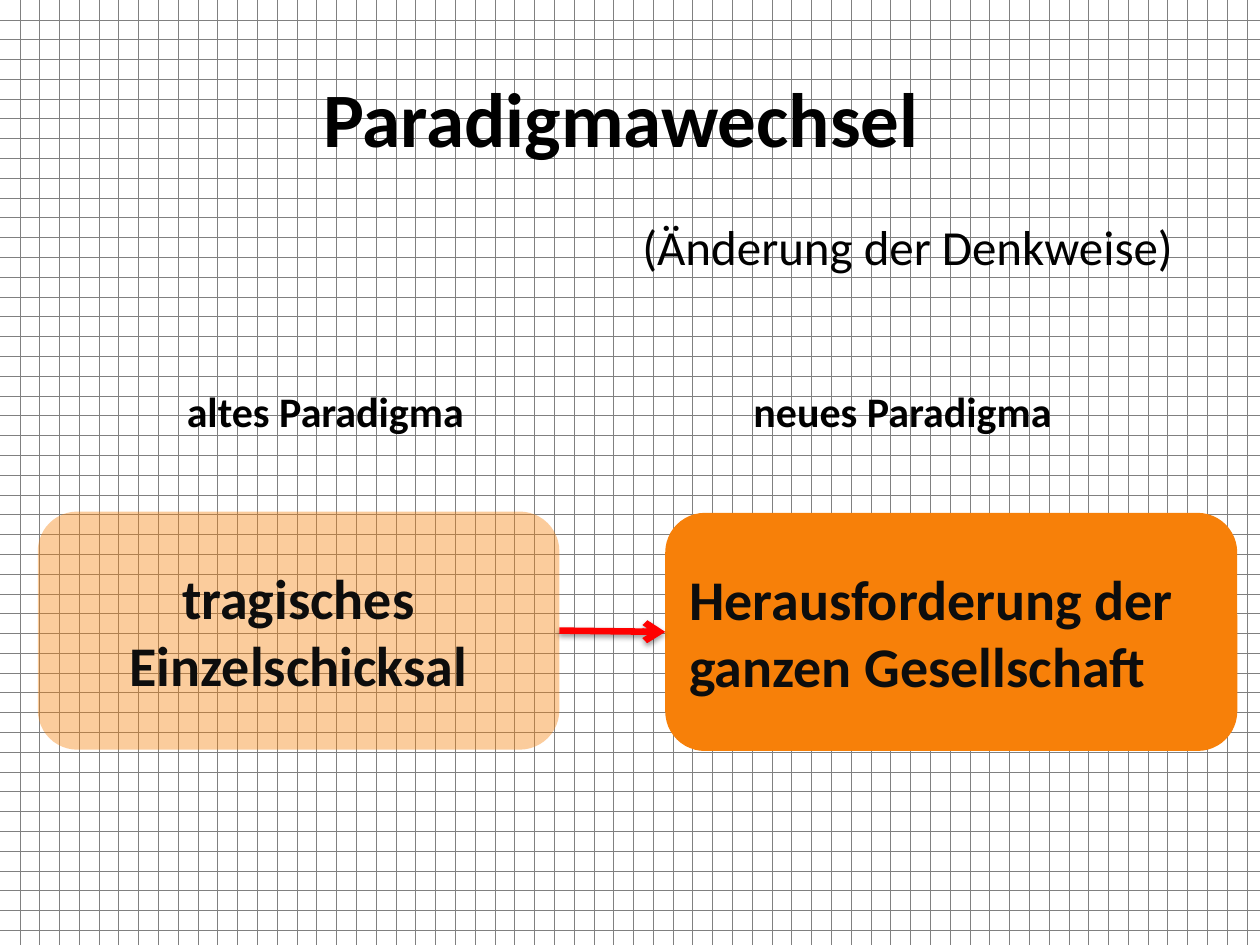
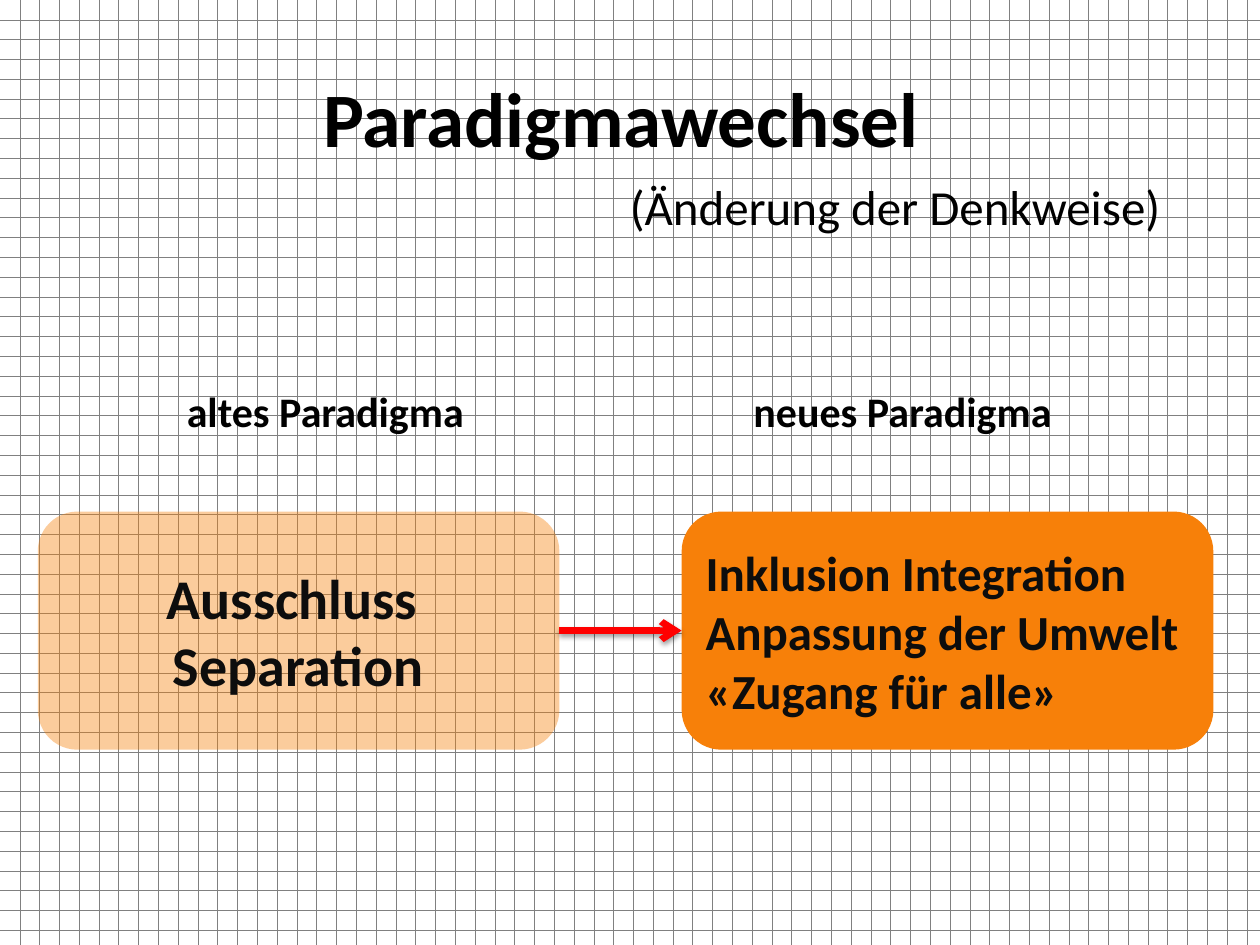
from lxml.etree import SubElement
from pptx import Presentation
from pptx.dml.color import RGBColor
from pptx.enum.dml import MSO_PATTERN
from pptx.enum.shapes import MSO_CONNECTOR, MSO_SHAPE
from pptx.enum.text import MSO_ANCHOR, PP_ALIGN
from pptx.oxml.ns import qn
from pptx.util import Inches, Pt

FONT = "Calibri"
BLACK, NEAR_BLACK, WHITE, GRID_GREY = "000000", "0D0D0D", "FFFFFF", "808080"
ORANGE, RED = "F78009", "FF0000"
TITLE_ONLY = 5

SLIDES = [
    dict(subtitle_at=(5, 1.67),
         old=["tragisches Einzelschicksal"],
         new=["Herausforderung der ganzen Gesellschaft"],
         new_box=(5.28, 4.07, 4.54, 1.89), new_size=32),
    dict(subtitle_at=(4.9, 1.35),
         old=["Ausschluss ", "Separation"],
         new=["Inklusion Integration", "Anpassung der Umwelt", "«Zugang für alle»"],
         new_box=(5.41, 4.06, 4.22, 1.89), new_size=28),
]


def color(hex_text):
    return RGBColor.from_string(hex_text)


def add_xml(parent, tag, **attributes):
    return SubElement(parent, qn(tag), {name: str(value) for name, value in attributes.items()})


def write(shape, lines, size, bold=True, hex_text=BLACK,
          align=PP_ALIGN.CENTER, anchor=MSO_ANCHOR.MIDDLE):
    frame = shape.text_frame
    frame.word_wrap = True
    frame.vertical_anchor = anchor
    for index, line in enumerate(lines):
        para = frame.add_paragraph() if index else frame.paragraphs[0]
        para.alignment = align
        span = para.add_run()
        span.text = line
        span.font.name = FONT
        span.font.size = Pt(size)
        span.font.bold = bold
        span.font.color.rgb = color(hex_text)


def add_label(page, box, text, size, **text_format):
    label = page.shapes.add_textbox(*map(Inches, box))
    write(label, [text], size, **text_format)


def add_card(page, box, lines, size, opacity=100, **text_format):
    card = page.shapes.add_shape(MSO_SHAPE.ROUNDED_RECTANGLE, *map(Inches, box))
    card.shadow.inherit = False
    card.line.fill.background()
    card.fill.solid()
    card.fill.fore_color.rgb = color(ORANGE)
    if opacity < 100:
        fill_color = card.fill._xPr.find(qn("a:solidFill"))[0]
        add_xml(fill_color, "a:alpha", val=opacity * 1000)
    write(card, lines, size, hex_text=NEAR_BLACK, **text_format)
    return card


def add_arrow(page, start, end):
    """Join the right side of start to the left side of end with a shadowed arrow."""
    arrow = page.shapes.add_connector(MSO_CONNECTOR.STRAIGHT, 0, 0, 0, 0)
    arrow.begin_connect(start, 3)
    arrow.end_connect(end, 1)
    arrow.line.color.rgb = color(RED)
    arrow.line.width = Pt(3.75)
    add_xml(arrow.line._get_or_add_ln(), "a:tailEnd", type="arrow")
    effects = add_xml(arrow._element.spPr, "a:effectLst")
    shadow = add_xml(effects, "a:outerShdw", blurRad=Pt(3.1), dist=Pt(1.6),
                     dir=90 * 60000, rotWithShape=0)
    shadow_color = add_xml(shadow, "a:srgbClr", val=BLACK)
    add_xml(shadow_color, "a:alpha", val=38000)


def add_grid_background(page):
    fill = page.background.fill
    fill.patterned()
    fill.pattern = MSO_PATTERN.DOTTED_GRID
    fill.fore_color.rgb = color(GRID_GREY)
    fill.back_color.rgb = color(WHITE)


def add_title(page, box):
    title = page.shapes.title
    title.left, title.top, title.width, title.height = map(Inches, box)
    write(title, ["Paradigmawechsel "], 44)


def add_paradigm_page(deck, subtitle_at, old, new, new_box, new_size):
    page = deck.slides.add_slide(deck.slide_layouts[TITLE_ONLY])
    add_grid_background(page)
    add_title(page, (0.5, 0.3, 9, 1.25))
    for left, heading in ((0.41, "altes Paradigma "), (4.99, "neues Paradigma ")):
        add_label(page, (left, 2.81, 4.42, 0.7), heading, 24, anchor=MSO_ANCHOR.BOTTOM)
    old_card = add_card(page, (0.3, 4.06, 4.14, 1.89), old, 32, opacity=40)
    new_card = add_card(page, new_box, new, new_size, align=PP_ALIGN.LEFT)
    add_label(page, (*subtitle_at, 4.76, 0.57), "(Änderung der Denkweise)", 28,
              bold=False, align=PP_ALIGN.LEFT, anchor=MSO_ANCHOR.TOP)
    add_arrow(page, old_card, new_card)


def main():
    deck = Presentation()
    deck.slide_width, deck.slide_height = Inches(10), Inches(7.5)
    for content in SLIDES:
        add_paradigm_page(deck, **content)
    deck.save("out.pptx")


if __name__ == "__main__":
    main()
